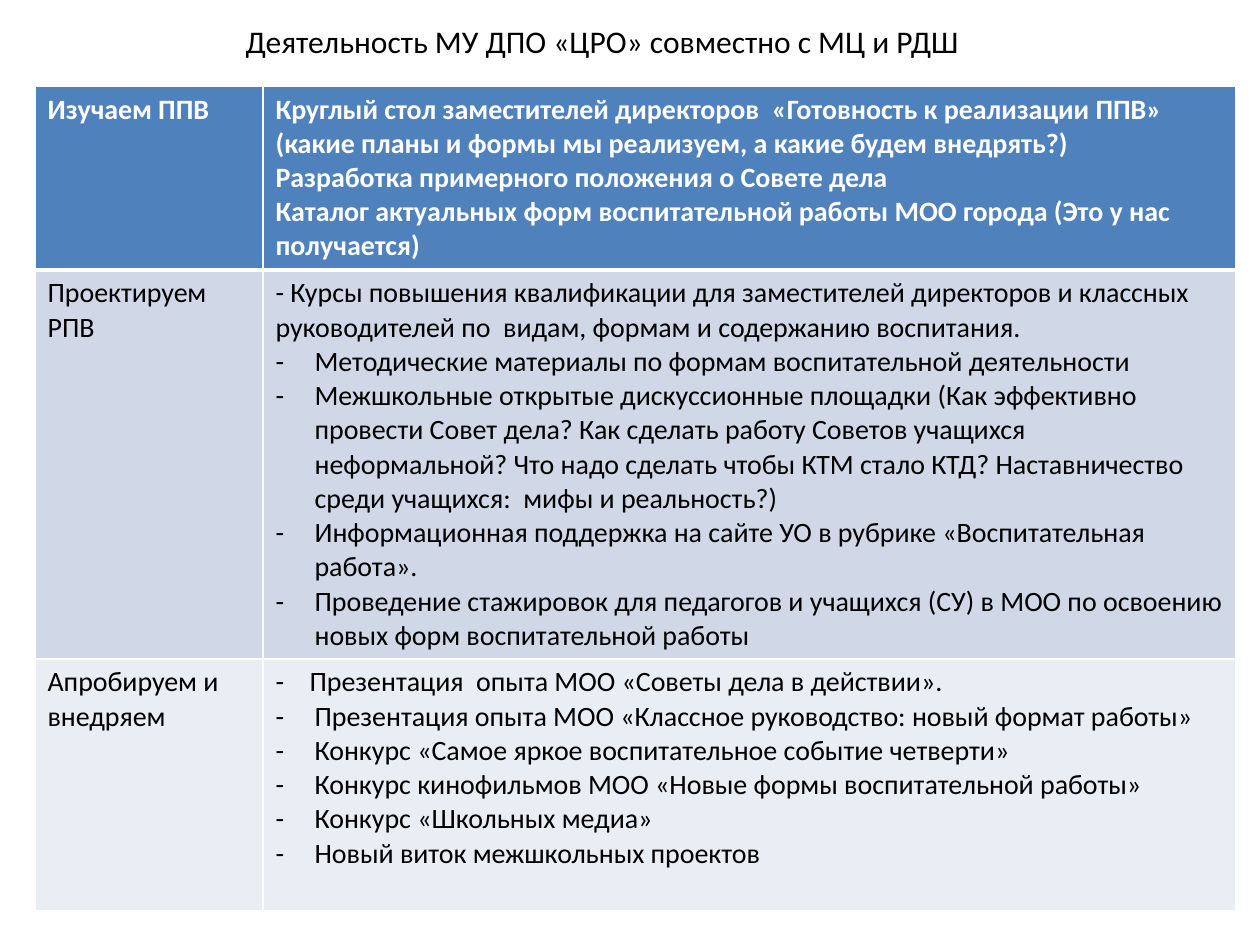
import pptx
import pptx.dml.color
import pptx.enum.text
import pptx.oxml
import pptx.oxml.ns
import pptx.util

EMU_PER_PX = 914400 // 126
FONT = "Calibri"
COLORS = {
    "white": "FFFFFF",
    "black": "000000",
    "header": "4F81BD",
    "band_dark": "D0D8E8",
    "band_light": "E9EDF4",
}
COLUMN_WIDTHS = [228, 973]
ROW_HEIGHTS = [184, 389, 252]
TITLE = "Деятельность МУ ДПО «ЦРО» совместно с МЦ и РДШ"
BULLET_INDENT = 39
NARROW_INDENT = 34

# Each row: stage, then its activities as (text, bullet indent).
STAGES = [
    ("Изучаем ППВ", [
        ("Круглый стол заместителей директоров  «Готовность к реализации ППВ» "
         "(какие планы и формы мы реализуем, а какие будем внедрять?)", 0),
        ("Разработка примерного положения о Совете дела", 0),
        ("Каталог актуальных форм воспитательной работы МОО города "
         "(Это у нас получается)", 0),
    ]),
    ("Проектируем РПВ", [
        ("- Курсы повышения квалификации для заместителей директоров и классных "
         "руководителей по  видам, формам и содержанию воспитания.", 0),
        ("Методические материалы по формам воспитательной деятельности", BULLET_INDENT),
        ("Межшкольные открытые дискуссионные площадки (Как эффективно провести "
         "Совет дела? Как сделать работу Советов учащихся неформальной? Что надо "
         "сделать чтобы КТМ стало КТД? Наставничество среди учащихся:  мифы и "
         "реальность?)", BULLET_INDENT),
        ("Информационная поддержка на сайте УО в рубрике «Воспитательная работа».",
         BULLET_INDENT),
        ("Проведение стажировок для педагогов и учащихся (СУ) в МОО по освоению "
         "новых форм воспитательной работы", BULLET_INDENT),
    ]),
    ("Апробируем и внедряем", [
        ("Презентация  опыта МОО «Советы дела в действии».", NARROW_INDENT),
        ("Презентация опыта МОО «Классное руководство: новый формат работы»",
         BULLET_INDENT),
        ("Конкурс «Самое яркое воспитательное событие четверти»", BULLET_INDENT),
        ("Конкурс кинофильмов МОО «Новые формы воспитательной работы»", BULLET_INDENT),
        ("Конкурс «Школьных медиа»", BULLET_INDENT),
        ("Новый виток межшкольных проектов", BULLET_INDENT),
    ]),
]


def px(length):
    """Turn pixels into EMU."""
    return pptx.util.Emu(length * EMU_PER_PX)


def rgb(name):
    """Look up a named colour."""
    return pptx.dml.color.RGBColor.from_string(COLORS[name])


def set_font(paragraph, size, color, bold=False):
    """Format all the text of a paragraph."""
    font = paragraph.font
    font.name = FONT
    font.size = pptx.util.Pt(size)
    font.bold = bold
    font.color.rgb = rgb(color)


def add_bullet(paragraph, indent):
    """Give a paragraph a hanging dash."""
    properties = paragraph._p.get_or_add_pPr()
    properties.set("marL", str(px(indent)))
    properties.set("indent", str(-px(indent)))
    namespace = pptx.oxml.ns.nsdecls("a")
    for xml in (f'<a:buFont {namespace} typeface="{FONT}"/>',
                f'<a:buChar {namespace} char="-"/>'):
        properties.append(pptx.oxml.parse_xml(xml))


def set_borders(cell, bottom_width, top_width):
    """Draw white borders around a cell."""
    properties = cell._tc.get_or_add_tcPr()
    widths = {"L": 1, "R": 1, "T": top_width, "B": bottom_width}
    for side, width in widths.items():
        properties.append(pptx.oxml.parse_xml(
            f'<a:ln{side} {pptx.oxml.ns.nsdecls("a")} w="{pptx.util.Pt(width)}">'
            f'<a:solidFill><a:srgbClr val="{COLORS["white"]}"/></a:solidFill>'
            f'</a:ln{side}>'))


def fill_cell(cell, items, row_index):
    """Write the paragraphs of a cell and style it for its row."""
    is_header = row_index == 0
    set_borders(cell, 3 if is_header else 1, 3 if row_index == 1 else 1)
    cell.fill.solid()
    cell.fill.fore_color.rgb = rgb(("header", "band_dark", "band_light")[row_index])
    frame = cell.text_frame
    for index, (text, indent) in enumerate(items):
        paragraph = frame.add_paragraph() if index else frame.paragraphs[0]
        paragraph.text = text
        if indent:
            add_bullet(paragraph, indent)
        set_font(paragraph, 16, "white" if is_header else "black", is_header)


def add_stage_table(slide):
    """Add the table of stages and activities."""
    table = slide.shapes.add_table(
        len(STAGES), len(COLUMN_WIDTHS), px(35), px(86),
        px(sum(COLUMN_WIDTHS)), px(sum(ROW_HEIGHTS))).table
    for column, width in zip(table.columns, COLUMN_WIDTHS):
        column.width = px(width)
    for row_index, (stage, activities) in enumerate(STAGES):
        table.rows[row_index].height = px(ROW_HEIGHTS[row_index])
        fill_cell(table.cell(row_index, 0), [(stage, 0)], row_index)
        fill_cell(table.cell(row_index, 1), activities, row_index)


def set_title(slide):
    """Place and format the title."""
    title = slide.shapes.title
    title.left, title.top, title.width, title.height = map(px, (233, 16, 747, 50))
    frame = title.text_frame
    frame.text = TITLE
    frame.word_wrap = False
    frame.auto_size = pptx.enum.text.MSO_AUTO_SIZE.SHAPE_TO_FIT_TEXT
    frame.vertical_anchor = pptx.enum.text.MSO_ANCHOR.TOP
    paragraph = frame.paragraphs[0]
    paragraph.alignment = pptx.enum.text.PP_ALIGN.LEFT
    set_font(paragraph, 18, "black")


def main():
    """Build and save the presentation."""
    presentation = pptx.Presentation()
    presentation.slide_width = pptx.util.Inches(10)
    presentation.slide_height = pptx.util.Inches(7.5)
    slide = presentation.slides.add_slide(presentation.slide_layouts[5])
    add_stage_table(slide)
    set_title(slide)
    presentation.save("out.pptx")


if __name__ == "__main__":
    main()
